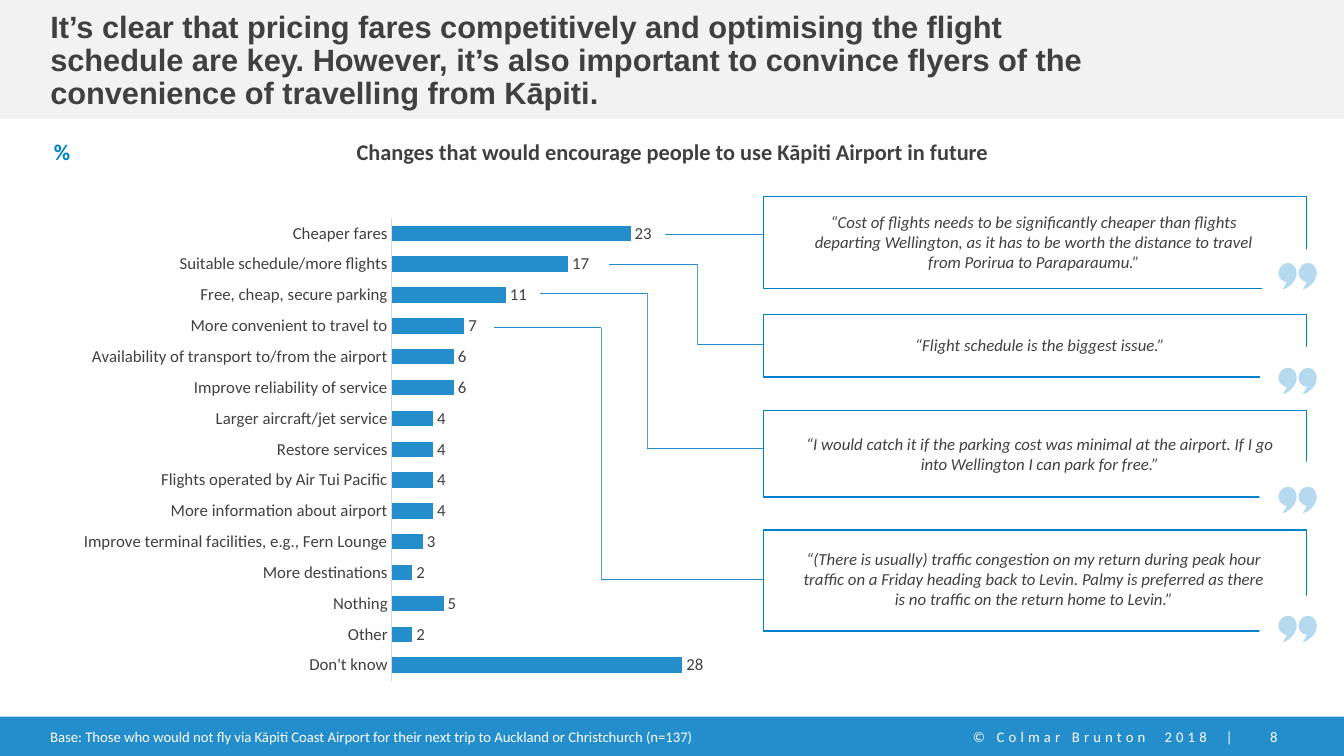
from lxml import etree
from pptx import Presentation
from pptx.chart.data import CategoryChartData
from pptx.dml.color import RGBColor
from pptx.enum.chart import XL_CHART_TYPE, XL_LABEL_POSITION, XL_TICK_MARK
from pptx.enum.shapes import MSO_CONNECTOR, MSO_SHAPE
from pptx.enum.text import MSO_ANCHOR, PP_ALIGN
from pptx.oxml import parse_xml
from pptx.oxml.ns import nsdecls, qn
from pptx.util import Inches, Pt

LEFT, CENTER, RIGHT = PP_ALIGN.LEFT, PP_ALIGN.CENTER, PP_ALIGN.RIGHT
TOP, MIDDLE = MSO_ANCHOR.TOP, MSO_ANCHOR.MIDDLE
RECTANGLE, OVAL = MSO_SHAPE.RECTANGLE, MSO_SHAPE.OVAL

# Content
TITLE = ("It’s clear that pricing fares competitively and optimising the flight schedule are key. "
         "However, it’s also important to convince flyers of the convenience of travelling from Kāpiti.")
CHART_TITLE = "Changes that would encourage people to use Kāpiti Airport in future"
BASE_NOTE = ("Base: Those who would not fly via Kāpiti Coast Airport for their next trip "
             "to Auckland or Christchurch (n=137)")
COPYRIGHT = "© Colmar Brunton  2018  |"
PAGE_NUMBER = "8"
CHANGES = [
    ("Cheaper fares", 23),
    ("Suitable schedule/more flights", 17),
    ("Free, cheap, secure parking", 11),
    ("More convenient to travel to", 7),
    ("Availability of transport to/from the airport", 6),
    ("Improve reliability of service", 6),
    ("Larger aircraft/jet service", 4),
    ("Restore services", 4),
    ("Flights operated by Air Tui Pacific", 4),
    ("More information about airport", 4),
    ("Improve terminal facilities, e.g., Fern Lounge", 3),
    ("More destinations", 2),
    ("Nothing", 5),
    ("Other", 2),
    ("Don't know", 28),
]
# box and gap: (top, height); text: (left, top, height); leader: points from bar to box
QUOTES = [
    {"text": "“Cost of flights needs to be significantly cheaper than flights departing Wellington, "
             "as it has to be worth the distance to travel from Porirua to Paraparaumu.”",
     "box": (1.95, 0.91), "gap": (2.46, 0.58), "text_at": (7.81, 2.05, 0.71), "mark": 2.61,
     "leader": [(6.6, 2.33), (7.57, 2.33)]},
    {"text": "“Flight schedule is the biggest issue.”",
     "box": (3.12, 0.62), "gap": (3.42, 0.8), "text_at": (7.87, 3.27, 0.3), "mark": 3.65,
     "leader": [(6.04, 2.62), (6.92, 2.62), (6.92, 3.42), (7.57, 3.42)]},
    {"text": "“I would catch it if the parking cost was minimal at the airport. "
             "If I go into Wellington I can park for free.”",
     "box": (4.07, 0.86), "gap": (4.56, 0.76), "text_at": (7.87, 4.25, 0.5), "mark": 4.83,
     "leader": [(5.36, 2.91), (6.42, 2.91), (6.42, 4.45), (7.57, 4.45)]},
    {"text": "“(There is usually) traffic congestion on my return during peak hour traffic on a Friday "
             "heading back to Levin. Palmy is preferred as there is no traffic on the return home to Levin.”",
     "box": (5.26, 1.0), "gap": (5.89, 0.76), "text_at": (7.81, 5.39, 0.71), "mark": 6.11,
     "leader": [(4.9, 3.25), (5.96, 3.25), (5.96, 5.75), (7.57, 5.75)]},
]
BOX_LEFT, BOX_WIDTH = 7.57, 5.39
GAP_LEFT, GAP_WIDTH = 12.49, 0.71
MARK_LEFT, COMMA_STEP = 12.68, 0.2
# One comma of the quote mark: start point, then cubic curves of three points each
COMMA = [
    (0.18, 0.1),
    (0.18, 0.06), (0.16, 0), (0.09, 0),
    (0.04, 0), (0, 0.05), (0, 0.1),
    (0, 0.14), (0.03, 0.18), (0.08, 0.19),
    (0.07, 0.22), (0.04, 0.26), (0.04, 0.26),
    (0.08, 0.26), (0.18, 0.19), (0.18, 0.1),
]

THEME = {
    "heading_font": "Arial", "body_font": "Calibri",
    "ink": "404040", "white": "FFFFFF", "band": "F2F2F2", "bar": "248ECC",
    "accent": "0080C8", "riser": "5B9BD5", "axis": "D9D9D9",
    "title": 22, "subtitle": 16, "body": 12, "footer": 10.5, "mark_alpha": 29,
}


def color(name):
    return RGBColor.from_string(THEME[name])


def style_font(font, size, ink="ink", family="body_font", bold=False, italic=False):
    font.size, font.name = Pt(THEME[size]), THEME[family]
    font.bold, font.italic = bold, italic
    font.color.rgb = color(ink)


def add_text(slide, box, text, size, align=LEFT, anchor=TOP, spacing=None,
             right_inset=0.1, tracking=None, **font_style):
    shape = slide.shapes.add_textbox(*map(Inches, box))
    frame = shape.text_frame
    frame.word_wrap = True
    frame.vertical_anchor = anchor
    frame.margin_right = Inches(right_inset)
    paragraph = frame.paragraphs[0]
    run = paragraph.add_run()
    run.text = text
    paragraph.alignment = align
    if spacing:
        paragraph.line_spacing = spacing
    style_font(paragraph.font, size, **font_style)
    if tracking:
        run.font._element.set("spc", str(tracking * 100))


def add_block(slide, kind, box, fill=None, line=None):
    shape = slide.shapes.add_shape(kind, *map(Inches, box))
    shape.shadow.inherit = False
    if fill:
        shape.fill.solid()
        shape.fill.fore_color.rgb = color(fill)
    else:
        shape.fill.background()
    if line:
        shape.line.color.rgb = color(line)
        shape.line.width = Pt(1)
    else:
        shape.line.fill.background()


def add_leader(slide, points):
    for start, end in zip(points, points[1:]):
        line = slide.shapes.add_connector(MSO_CONNECTOR.STRAIGHT, *map(Inches, start + end))
        line.line.color.rgb = color("riser" if start[0] == end[0] else "bar")
        line.line.width = Pt(0.5)
        etree.SubElement(line._element.spPr, qn("a:effectLst"))


def bend_segments(shape):
    """Turn every three straight segments into one cubic curve."""
    segments = list(shape._element.spPr.iter(qn("a:lnTo")))
    for index in range(0, len(segments), 3):
        curve = etree.Element(qn("a:cubicBezTo"))
        segments[index].addprevious(curve)
        for segment in segments[index:index + 3]:
            curve.append(segment[0])
            segment.getparent().remove(segment)


def add_quote_mark(slide, top):
    builder = None
    for left in (MARK_LEFT, MARK_LEFT + COMMA_STEP):
        points = [(Inches(left + x), Inches(top + y)) for x, y in COMMA]
        if builder is None:
            builder = slide.shapes.build_freeform(*points[0])
        else:
            builder.move_to(*points[0])
        builder.add_line_segments(points[1:], close=True)
    mark = builder.convert_to_shape()
    bend_segments(mark)
    mark.shadow.inherit = False
    mark.line.fill.background()
    mark.fill.solid()
    mark.fill.fore_color.rgb = color("accent")
    fill_color = mark._element.spPr.find(".//" + qn("a:srgbClr"))
    etree.SubElement(fill_color, qn("a:alpha")).set("val", str(THEME["mark_alpha"] * 1000))


def add_bar_chart(slide):
    data = CategoryChartData()
    data.categories = [label for label, _ in CHANGES]
    data.add_series("Series 1", [value for _, value in CHANGES])
    chart = slide.shapes.add_chart(XL_CHART_TYPE.BAR_CLUSTERED,
                                   *map(Inches, (0.58, 1.99, 6.52, 4.93)), data).chart
    chart.has_legend = chart.has_title = False
    style_font(chart.font, "body")
    category_axis, value_axis = chart.category_axis, chart.value_axis
    category_axis.reverse_order = True
    category_axis.major_tick_mark = XL_TICK_MARK.NONE
    category_axis.format.line.color.rgb = color("axis")
    category_axis.format.line.width = Pt(0.75)
    style_font(category_axis.tick_labels.font, "body")
    value_axis.visible = value_axis.has_major_gridlines = False
    value_axis.minimum_scale, value_axis.maximum_scale = 0, 30
    plot = chart.plots[0]
    plot.gap_width, plot.vary_by_categories = 100, False
    fill = plot.series[0].format.fill
    fill.solid()
    fill.fore_color.rgb = color("bar")
    plot.has_data_labels = True
    labels = plot.data_labels
    labels.show_value, labels.position = True, XL_LABEL_POSITION.OUTSIDE_END
    style_font(labels.font, "body")
    # Fixed inner plot area
    plot_area = chart._chartSpace.chart.plotArea
    for layout in plot_area.findall(qn("c:layout")):
        plot_area.remove(layout)
    sizes = "".join(f'<c:{tag} val="{value}"/>' for tag, value in
                    (("x", 0.507), ("y", 0.035), ("w", 0.474), ("h", 0.931)))
    plot_area.insert(0, parse_xml(
        f'<c:layout {nsdecls("c")}><c:manualLayout><c:layoutTarget val="inner"/>'
        f'<c:xMode val="edge"/><c:yMode val="edge"/>{sizes}</c:manualLayout></c:layout>'))


def main():
    presentation = Presentation()
    presentation.slide_width, presentation.slide_height = Inches(13.33), Inches(7.5)
    slide = presentation.slides.add_slide(presentation.slide_layouts[6])

    # Header and footer
    add_block(slide, RECTANGLE, (0, 0, 13.33, 1.18), fill="band")
    add_block(slide, RECTANGLE, (0, 7.11, 13.33, 0.39), fill="bar")
    add_text(slide, (0.4, 0.02, 10.75, 1.18), TITLE, "title", anchor=MIDDLE, spacing=0.9,
             family="heading_font", bold=True)
    footer = {"size": "footer", "anchor": MIDDLE, "ink": "white"}
    add_text(slide, (0.4, 7.17, 8.96, 0.28), BASE_NOTE, **footer)
    add_text(slide, (9.47, 7.17, 2.86, 0.28), COPYRIGHT, align=RIGHT, tracking=3, **footer)
    add_text(slide, (12.34, 7.17, 0.6, 0.28), PAGE_NUMBER, align=RIGHT, tracking=3,
             right_inset=0.27, **footer)

    # Chart with its heading
    add_bar_chart(slide)
    add_text(slide, (3.37, 1.32, 6.6, 0.37), CHART_TITLE, "subtitle", align=CENTER, bold=True)
    add_text(slide, (0.39, 1.32, 0.45, 0.37), "%", "subtitle", align=CENTER, ink="accent", bold=True)

    # Quotes tied to the top four bars
    for quote in QUOTES:
        box_top, box_height = quote["box"]
        gap_top, gap_height = quote["gap"]
        text_left, text_top, text_height = quote["text_at"]
        add_block(slide, RECTANGLE, (BOX_LEFT, box_top, BOX_WIDTH, box_height), line="accent")
        add_block(slide, OVAL, (GAP_LEFT, gap_top, GAP_WIDTH, gap_height), fill="white")
        add_quote_mark(slide, quote["mark"])
        add_text(slide, (text_left, text_top, 4.89, text_height), quote["text"], "body",
                 align=CENTER, italic=True)
        add_leader(slide, quote["leader"])

    presentation.save("out.pptx")


if __name__ == "__main__":
    main()
